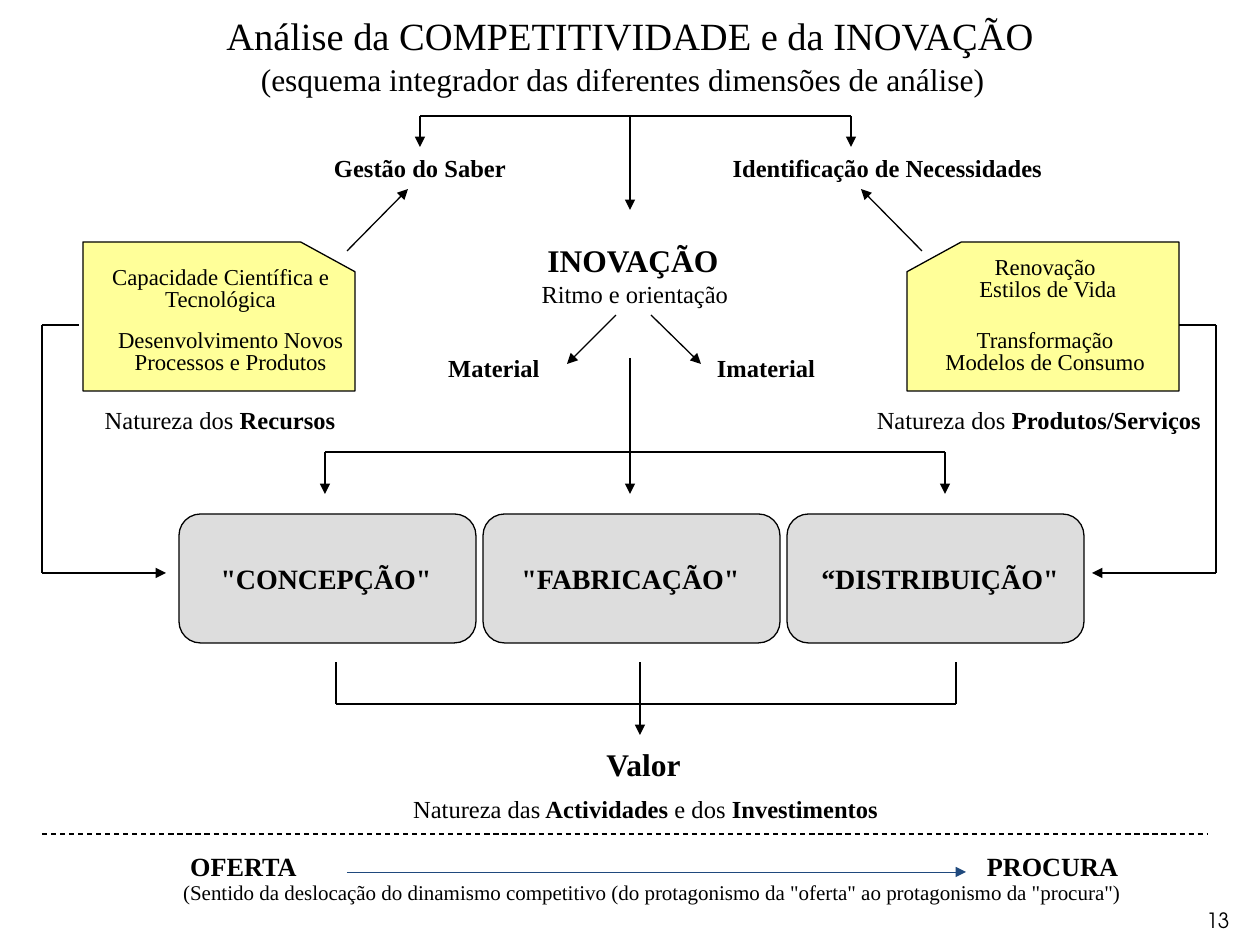
from lxml import etree
from pptx import Presentation
from pptx import util as u
from pptx.dml.color import RGBColor as Rgb
from pptx.enum import dml, shapes, text
from pptx.oxml.ns import qn

px = u.Inches(1) / 126
theme = {
    "ink": Rgb(0, 0, 0), "blue": Rgb(0x1F, 0x49, 0x7D),
    "grey": Rgb(0xDD, 0xDD, 0xDD), "cream": Rgb(0xFF, 0xFF, 0x99),
    "serif": "Times New Roman", "sans": "TeX Gyre Adventor",
    "title": 22, "sub": 18, "gap": 32, "head": 18, "stage": 16,
    "side": 15, "label": 14, "card": 13, "note": 12,
}
deck = Presentation()
deck.slide_width, deck.slide_height = int(1260 * px), int(945 * px)
slide = deck.slides.add_slide(deck.slide_layouts[6])
items = slide.shapes


def write(box, runs, pad=True, wrap=True, lead=None, face="serif", align="CENTER", anchor="TOP"):
    area = items.add_textbox(*[int(n * px) for n in box])
    frame = area.text_frame
    form = {"word_wrap": wrap, "vertical_anchor": getattr(text.MSO_ANCHOR, anchor)}
    if not wrap:
        form["auto_size"] = text.MSO_AUTO_SIZE.SHAPE_TO_FIT_TEXT
    if not pad:
        form.update({"margin_" + side: 0 for side in ("left", "top", "right", "bottom")})
    for key, val in form.items():
        setattr(frame, key, val)
    para = frame.paragraphs[0]
    para.alignment = getattr(text.PP_ALIGN, align)
    if lead:
        para.line_spacing = lead
    for words, size in runs:
        for i, part in enumerate(words.split("*")):
            for j, line in enumerate(part.split("\n")):
                if j:
                    para.add_line_break()
                if line:
                    run = para.add_run()
                    run.text = line
                    look = {"name": theme[face], "size": u.Pt(theme[size]), "bold": i % 2 == 1}
                    for key, val in look.items():
                        setattr(run.font, key, val)
                    run.font.color.rgb = theme["ink"]


def draw(x1, y1, x2, y2, arrow=False, tint="ink", width=0.75, dash=None):
    ends = [int(n * px) for n in (x1, y1, x2, y2)]
    link = items.add_connector(shapes.MSO_CONNECTOR.STRAIGHT, *ends)
    link.line.color.rgb = theme[tint]
    link.line.width = u.Pt(width)
    if dash:
        link.line.dash_style = dash
    if arrow:
        etree.SubElement(link.line._get_or_add_ln(), qn("a:tailEnd"), type="triangle")
    etree.SubElement(link._element.spPr, qn("a:effectLst"))


kind = shapes.MSO_SHAPE
solids = [(kind.ROUNDED_RECTANGLE, 179 + 304 * i, 514, 297, 129, "grey", False) for i in range(3)]
solids += [
    (kind.FLOWCHART_CARD, 907, 242, 272, 149, "cream", False),
    (kind.FLOWCHART_CARD, 83, 242, 272, 149, "cream", True),
]
for form, x, y, w, h, tint, flip in solids:
    solid = items.add_shape(form, *[int(n * px) for n in (x, y, w, h)])
    solid.shadow.inherit = False
    solid.fill.solid()
    solid.fill.fore_color.rgb = theme[tint]
    solid.line.color.rgb = theme["ink"]
    solid.line.width = u.Pt(0.75)
    if flip:
        solid._element.spPr.xfrm.set("flipH", "1")

for rail, tip, card in ((42, 166, 79), (1216, 1092, 1179)):
    draw(rail, 325, rail, 573)
    draw(rail, 573, tip, 573, True)
    draw(rail, 325, card, 325)

for left, right, y in ((420, 851, 116), (325, 945, 452), (336, 956, 704)):
    draw(left, y, right, y)
for x, y1, y2 in (
    (420, 116, 147), (851, 116, 147), (630, 116, 210),
    (325, 452, 494), (630, 452, 494), (945, 452, 494), (640, 704, 735),
):
    draw(x, y1, x, y2, True)
for x, y1, y2 in ((630, 358, 456), (336, 704, 662), (640, 704, 662), (956, 704, 662)):
    draw(x, y1, x, y2)
for ends in ((347, 251, 408, 189), (922, 251, 861, 189), (651, 315, 701, 364), (616, 315, 567, 364)):
    draw(*ends, True)
draw(42, 834, 1207, 834, dash=dml.MSO_LINE.DASH)
draw(347, 872, 966, 872, True, "blue", 0.25)

write((0, 11, 1260, 95), [
    ("Análise da COMPETITIVIDADE e da INOVAÇÃO\n", "title"),
    ("(esquema integrador das diferentes dimensões de análise)", "sub"),
    (" ", "gap"),
], lead=0.65, anchor="BOTTOM")

for x, y, w, words in (
    (714, 147, 347, "*Identificação de Necessidades*"),
    (294, 147, 252, "*Gestão do Saber*"),
    (73, 399, 294, "Natureza dos* Recursos*"),
    (850, 399, 378, "Natureza dos* Produtos/Serviços*"),
    (94, 788, 1103, "Natureza das* Actividades *e dos* Investimentos*"),
    (368, 347, 252, "*Material*"),
    (640, 347, 252, "*Imaterial*"),
    (378, 273, 514, "Ritmo e orientação"),
):
    write((x, y, w, 42), [(words, "label")])

for x, y, w, words in (
    (914, 252, 262, "Renovação\n Estilos de Vida"),
    (84, 262, 273, "Capacidade Científica e Tecnológica"),
    (73, 325, 315, "Desenvolvimento Novos Processos e Produtos"),
    (903, 325, 284, "Transformação\nModelos de Consumo"),
):
    write((x, y, w, 57), [(words, "card")], lead=0.8)

for x, w, words in ((179, 294, '"CONCEPÇÃO"'), (494, 273, '"FABRICAÇÃO"'), (798, 284, '“DISTRIBUIÇÃO"')):
    write((x, 562, w, 34), [(f"*{words}*", "stage")], pad=False)

for x, y, w, h, words, size in (
    (544, 241, 178, 38, "*INOVAÇÃO*", "head"),
    (603, 745, 81, 38, "*Valor*", "head"),
    (186, 850, 115, 32, "*OFERTA*", "side"),
    (982, 850, 141, 32, "*PROCURA*", "side"),
    (180, 880, 945, 25, '(Sentido da deslocação do dinamismo competitivo (do protagonismo da "oferta" ao protagonismo da "procura")', "note"),
):
    write((x, y, w, h), [(words, size)], pad=False, wrap=False)

write((980, 901, 262, 32), [("13", "note")], face="sans", align="RIGHT")
deck.save("out.pptx")
